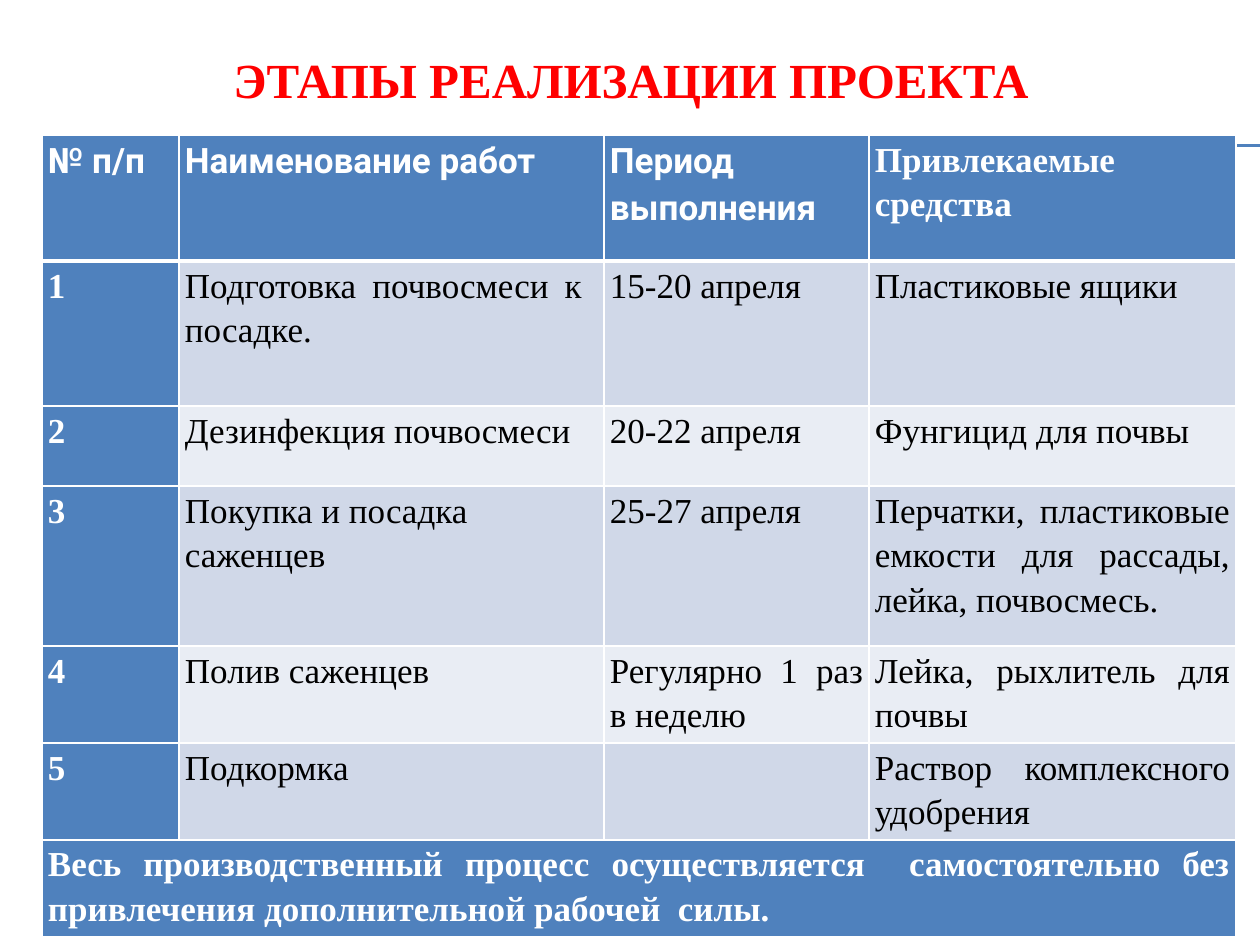
from dataclasses import dataclass

from lxml.etree import SubElement
from pptx import Presentation
from pptx.dml.color import RGBColor
from pptx.enum.shapes import MSO_CONNECTOR
from pptx.enum.text import MSO_ANCHOR, PP_ALIGN
from pptx.oxml import parse_xml
from pptx.oxml.ns import nsdecls, qn
from pptx.util import Emu, Pt

PX_PER_INCH = 126
RED = RGBColor(0xFF, 0x00, 0x00)
WHITE = RGBColor(0xFF, 0xFF, 0xFF)
BLACK = RGBColor(0x00, 0x00, 0x00)
BLUE = RGBColor(0x4F, 0x81, 0xBD)
BANDS = (RGBColor(0xE9, 0xED, 0xF4), RGBColor(0xD0, 0xD8, 0xE8))
SERIF, SANS = "Times New Roman", "Roboto"

COL_WIDTHS = (137, 425, 265, 367)


@dataclass(frozen=True)
class Row:
    height: int
    texts: tuple[str, ...]


ROWS = (
    Row(126, ("№ п/п", "Наименование работ", "Период выполнения", "Привлекаемые средства")),
    Row(145, ("1", "Подготовка почвосмеси к  посадке.", "15-20 апреля", "Пластиковые ящики")),
    Row(80, ("2", "Дезинфекция почвосмеси", "20-22 апреля", "Фунгицид для почвы")),
    Row(160, ("3", "Покупка и посадка саженцев", "25-27 апреля",
              "Перчатки, пластиковые емкости для рассады, лейка, почвосмесь.")),
    Row(97, ("4", "Полив саженцев", "Регулярно 1 раз в неделю", "Лейка, рыхлитель для почвы")),
    Row(97, ("5", "Подкормка", "", "Раствор комплексного удобрения")),
    Row(97, ("Весь производственный процесс осуществляется  самостоятельно без "
             "привлечения дополнительной рабочей  силы.", "", "", "")),
)
FOOTER = len(ROWS) - 1


def px(n: int) -> Emu:
    return Emu(round(n * 914400 / PX_PER_INCH))


def add_title(slide, text: str) -> None:
    sp = slide.shapes.title
    sp.left, sp.top, sp.width, sp.height = px(64), px(-44), px(1134), px(299)
    tf = sp.text_frame
    tf.text = text
    tf.word_wrap = True
    tf.vertical_anchor = MSO_ANCHOR.MIDDLE
    tf.margin_bottom = px(60)
    p = tf.paragraphs[0]
    p.alignment = PP_ALIGN.CENTER
    font = p.runs[0].font
    font.name, font.size, font.bold = SERIF, Pt(28), True
    font.color.rgb = RED


def add_rule(slide, y: int) -> None:
    line = slide.shapes.add_connector(MSO_CONNECTOR.STRAIGHT, px(70), px(y), px(1260), px(y))
    line.line.color.rgb = BLUE
    line.line.width = Pt(0.75)
    SubElement(line._element.spPr, qn("a:effectLst"))


def set_borders(cell, top: int, bottom: int) -> None:
    """Give the cell white borders; top and bottom widths are in points."""
    tc_pr = cell._tc.get_or_add_tcPr()
    widths = (("lnL", 1), ("lnR", 1), ("lnT", top), ("lnB", bottom))
    for i, (tag, width) in enumerate(widths):
        tc_pr.insert(i, parse_xml(
            f'<a:{tag} {nsdecls("a")} w="{Pt(width)}"><a:solidFill>'
            f'<a:srgbClr val="{WHITE}"/></a:solidFill></a:{tag}>'))


def fill_cell(cell, text: str, row: int, col: int) -> None:
    strong = row in (0, FOOTER) or col == 0
    cell.fill.solid()
    cell.fill.fore_color.rgb = BLUE if strong else BANDS[row % 2]
    set_borders(cell, 3 if row == 1 else 1, 3 if row == 0 else 1)
    cell.margin_left = cell.margin_right = px(6)
    cell.margin_top = cell.margin_bottom = 0
    if not text:
        return
    cell.text_frame.text = text
    p = cell.text_frame.paragraphs[0]
    p.alignment = PP_ALIGN.LEFT if (row, col) == (3, 1) else PP_ALIGN.JUSTIFY
    p.line_spacing = 1.15
    font = p.runs[0].font
    font.name = SANS if row == 0 and col < 3 else SERIF
    font.size, font.bold = Pt(20), strong
    font.color.rgb = WHITE if strong else BLACK


def add_stages_table(slide) -> None:
    height = sum(row.height for row in ROWS)
    table = slide.shapes.add_table(len(ROWS), len(COL_WIDTHS), px(42), px(135),
                                   px(sum(COL_WIDTHS)), px(height)).table
    for column, width in zip(table.columns, COL_WIDTHS):
        column.width = px(width)
    for i, row in enumerate(ROWS):
        table.rows[i].height = px(row.height)
        for j, text in enumerate(row.texts):
            fill_cell(table.cell(i, j), text, i, j)
    table.cell(FOOTER, 0).merge(table.cell(FOOTER, len(COL_WIDTHS) - 1))


def main() -> None:
    prs = Presentation()
    prs.slide_width, prs.slide_height = px(1260), px(945)
    slide = prs.slides.add_slide(prs.slide_layouts[5])
    for y in (145, 146):
        add_rule(slide, y)
    add_title(slide, "ЭТАПЫ РЕАЛИЗАЦИИ ПРОЕКТА")
    add_stages_table(slide)
    prs.save("out.pptx")


if __name__ == "__main__":
    main()
